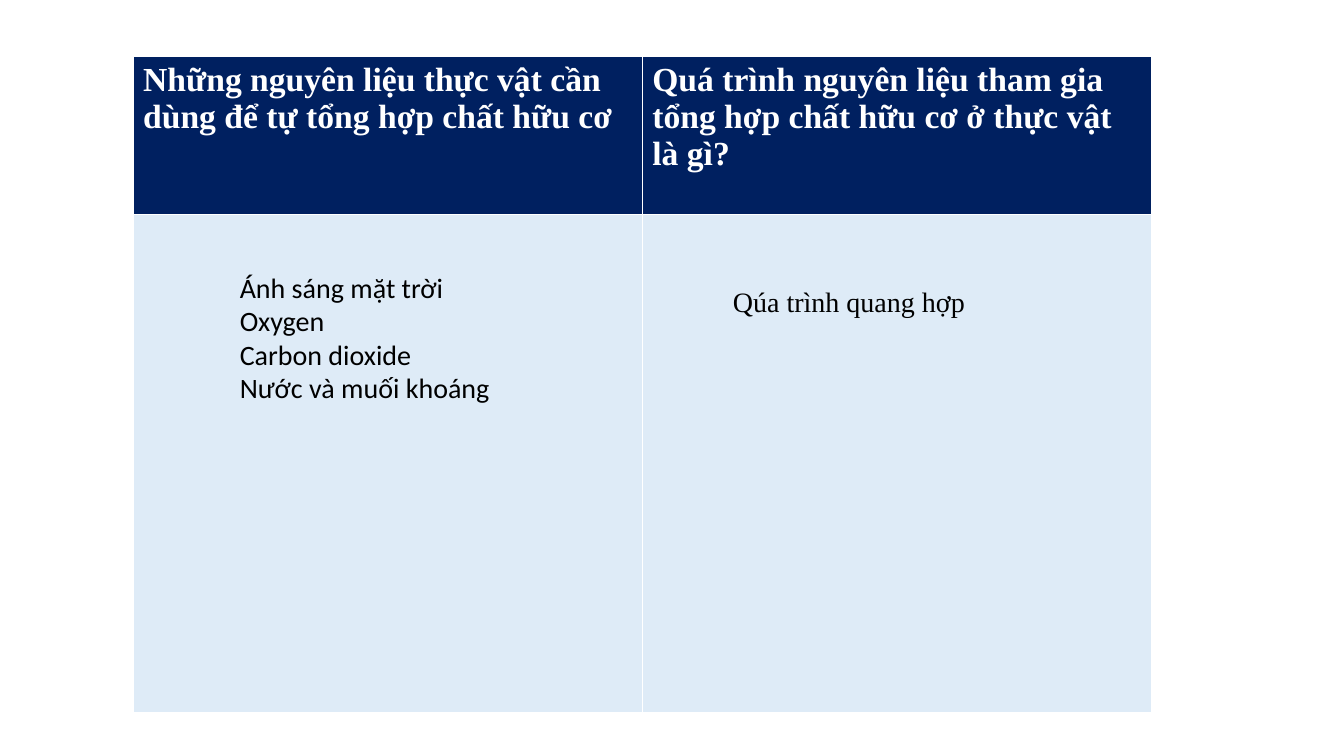
from pptx import Presentation
from pptx.dml.color import RGBColor
from pptx.enum.text import MSO_AUTO_SIZE
from pptx.util import Inches, Pt

NAVY = RGBColor(0x00, 0x20, 0x60)
PALE_BLUE = RGBColor(0xDE, 0xEB, 0xF7)
WHITE = RGBColor(0xFF, 0xFF, 0xFF)
BLACK = RGBColor(0x00, 0x00, 0x00)
SERIF = "Times New Roman"
SANS = "Calibri"


class SlideBuilder:
    """Holds the current slide and its text and table styles."""

    header_size = 24
    body_size = 20

    def __init__(self, slide):
        self.s = slide

    def fill_text(self, tf, lines, font, size, color, bold=False):
        tf.text = "\n".join(lines)
        for p in tf.paragraphs:
            for r in p.runs:
                r.font.name = font
                r.font.size = Pt(size)
                r.font.color.rgb = color
                r.font.bold = bold

    def table(self, left, top, col_width, row_heights, headers):
        width, height = col_width * len(headers), sum(row_heights)
        table = self.s.shapes.add_table(
            len(row_heights), len(headers),
            Inches(left), Inches(top), Inches(width), Inches(height)).table
        for row, row_height in zip(table.rows, row_heights):
            row.height = Inches(row_height)
        for col, header in enumerate(headers):
            table.columns[col].width = Inches(col_width)
            self.fill_text(table.cell(0, col).text_frame, [header],
                           SERIF, self.header_size, WHITE, bold=True)
            for row in range(len(row_heights)):
                fill = table.cell(row, col).fill
                fill.solid()
                fill.fore_color.rgb = PALE_BLUE if row else NAVY

    def text(self, left, top, width, height, lines, font):
        sp = self.s.shapes.add_textbox(
            Inches(left), Inches(top), Inches(width), Inches(height))
        tf = sp.text_frame
        tf.word_wrap = True
        tf.auto_size = MSO_AUTO_SIZE.SHAPE_TO_FIT_TEXT
        self.fill_text(tf, lines, font, self.body_size, BLACK)


def main():
    prs = Presentation()
    prs.slide_width, prs.slide_height = Inches(13.33), Inches(7.5)
    builder = SlideBuilder(prs.slides.add_slide(prs.slide_layouts[6]))

    # Question table
    builder.table(1.32, 0.56, 5.05, [1.57, 4.94], [
        "Những nguyên liệu thực vật cần dùng để tự tổng hợp chất hữu cơ",
        "Quá trình nguyên liệu tham gia tổng hợp chất hữu cơ ở thực vật là gì?",
    ])

    # Answers
    builder.text(2.28, 2.63, 3.57, 1.45, [
        "Ánh sáng mặt trời",
        "Oxygen",
        "Carbon dioxide",
        "Nước và muối khoáng",
    ], SANS)
    builder.text(7.17, 2.77, 2.8, 0.44, ["Qúa trình quang hợp"], SERIF)

    prs.save("out.pptx")


if __name__ == "__main__":
    main()
